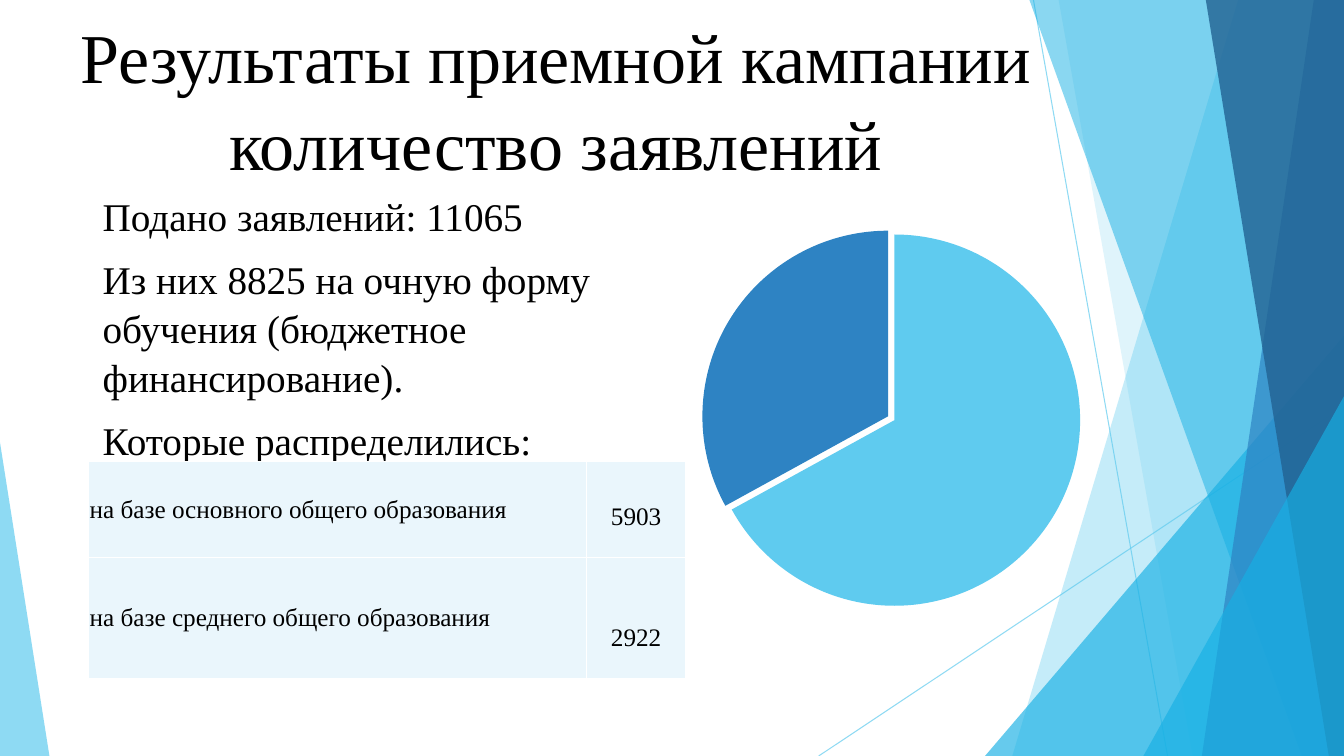
"""Build the slide on admission results with a pie chart and a table."""
import pptx
import pptx.chart.data
import pptx.dml.color
import pptx.enum.chart
import pptx.enum.shapes
import pptx.enum.text
import pptx.oxml
import pptx.oxml.ns
import pptx.util

RGB = pptx.dml.color.RGBColor
SKY = RGB(0x5F, 0xCB, 0xEF)
CYAN = RGB(0x17, 0xB0, 0xE4)
BLUE = RGB(0x2E, 0x83, 0xC3)
NAVY = RGB(0x22, 0x62, 0x92)
PALE = RGB(0xEA, 0xF6, 0xFC)
BLACK = RGB(0, 0, 0)
SERIF = "Times New Roman"
SCALE = 9144
WIDE, HIGH = 1333, 750
ALIGN = pptx.enum.text.PP_ALIGN
ANCHOR = pptx.enum.text.MSO_ANCHOR
qn = pptx.oxml.ns.qn


def px(*nums):
    return [pptx.util.Emu(num * SCALE) for num in nums]


def node(text):
    head, tail = text.split(">", 1) if not text.endswith("/>") else (text[:-2], None)
    names = pptx.oxml.ns.nsdecls("a", "c")
    return pptx.oxml.parse_xml(f"{head} {names}/>" if tail is None else f"{head} {names}>{tail}")


def fade(fill, color, alpha):
    fill.solid()
    fill.fore_color.rgb = color
    tint = fill.fore_color._xFill.find(qn("a:srgbClr"))
    tint.append(node(f'<a:alpha val="{alpha * 1000}"/>'))


def paint(shape, color, alpha):
    shape.shadow.inherit = False
    fade(shape.fill, color, alpha)
    shape.line.fill.background()


def add_line(slide, ends):
    kind = pptx.enum.shapes.MSO_CONNECTOR.STRAIGHT
    line = slide.shapes.add_connector(kind, *px(*ends))
    line.line.width = pptx.util.Pt(0.75)
    fade(line.line.fill, SKY, 70)
    line._element.spPr.append(node("<a:effectLst/>"))


def add_band(slide, top, base, color, alpha):
    pen = slide.shapes.build_freeform(top, 0, scale=SCALE)
    pen.add_line_segments([(WIDE, 0), (WIDE, HIGH), (base, HIGH)], close=True)
    paint(pen.convert_to_shape(), color, alpha)


def add_peak(slide, box, tip, color, alpha):
    kind = pptx.enum.shapes.MSO_SHAPE.ISOSCELES_TRIANGLE
    peak = slide.shapes.add_shape(kind, *px(*box))
    peak.adjustments[0] = tip
    paint(peak, color, alpha)


def add_run(para, text, size):
    run = para.add_run()
    run.text = text
    run.font.name = SERIF
    run.font.size = pptx.util.Pt(size)
    run.font.color.rgb = BLACK


def fill_title(slide, lines):
    title = slide.shapes.title
    title.left, title.top, title.width, title.height = px(22, 0, 1059, 144)
    frame = title.text_frame
    frame.word_wrap = True
    frame.auto_size = pptx.enum.text.MSO_AUTO_SIZE.NONE
    frame.vertical_anchor = ANCHOR.TOP
    frame.margin_top = px(10)[0]
    para = frame.paragraphs[0]
    para.alignment = ALIGN.CENTER
    para.line_spacing = 1.04
    for num, line in enumerate(lines):
        if num:
            para.add_line_break()
        add_run(para, line, 50)
    slide.shapes._spTree.append(title._element)


def add_body(slide, box, lines):
    frame = slide.shapes.add_textbox(*px(*box)).text_frame
    frame.word_wrap = True
    for num, line in enumerate(lines):
        para = frame.add_paragraph() if num else frame.paragraphs[0]
        para.space_before = pptx.util.Pt(10)
        para.line_spacing = 1.04
        add_run(para, line, 28)


def add_pie(slide, box, parts):
    data = pptx.chart.data.CategoryChartData()
    data.categories = ["1", "2"]
    data.add_series("Series 1", [val for val, _ in parts])
    kind = pptx.enum.chart.XL_CHART_TYPE.PIE
    chart = slide.shapes.add_chart(kind, *px(*box), data).chart
    chart.has_legend = False
    chart.has_title = False
    chart.font.name = "Cabin"
    chart.font.size = pptx.util.Pt(10)
    chart.font.color.rgb = BLACK
    plot = chart.plots[0]
    plot.vary_by_categories = True
    series = plot.series[0]
    for num, (_, color) in enumerate(parts):
        fill = series.points[num].format.fill
        fill.solid()
        fill.fore_color.rgb = color
    series._element.find(qn("c:dPt")).addprevious(node('<c:explosion val="2"/>'))
    area = chart._chartSpace.find(".//" + qn("c:plotArea"))
    for old in area.findall(qn("c:layout")):
        area.remove(old)
    spots = {"x": 0.16, "y": 0, "w": 0.75, "h": 0.81}
    rules = '<c:layoutTarget val="inner"/><c:xMode val="edge"/><c:yMode val="edge"/>'
    rules += "".join(f'<c:{key} val="{val}"/>' for key, val in spots.items())
    area.insert(0, node(f"<c:layout><c:manualLayout>{rules}</c:manualLayout></c:layout>"))


def fill_cell(cell, text, is_num):
    cell.margin_left = cell.margin_right = cell.margin_top = px(1)[0]
    cell.margin_bottom = px(26 if is_num else 0)[0]
    cell.vertical_anchor = ANCHOR.BOTTOM if is_num else ANCHOR.MIDDLE
    para = cell.text_frame.paragraphs[0]
    para.alignment = ALIGN.CENTER if is_num else ALIGN.LEFT
    add_run(para, text, 18)
    for side in "LRTB":
        cell._tc.get_or_add_tcPr().append(node(
            f'<a:ln{side} w="12700"><a:solidFill><a:srgbClr val="FFFFFF"/>'
            f"</a:solidFill></a:ln{side}>"))
    cell.fill.solid()
    cell.fill.fore_color.rgb = PALE


def add_grid(slide, spot, wides, highs, rows):
    box = px(*spot, sum(wides), sum(highs))
    table = slide.shapes.add_table(len(rows), len(wides), *box).table
    table.first_row = table.horz_banding = False
    for col, wide in zip(table.columns, px(*wides)):
        col.width = wide
    for num, (row, high) in enumerate(zip(rows, px(*highs))):
        table.rows[num].height = high
        for col, text in enumerate(row):
            fill_cell(table.cell(num, col), text, col == 1)


def add_decor(slide):
    add_line(slide, (1025, 0, 1158, 750))
    add_line(slide, (1333, 403, 812, 750))
    add_band(slide, 1228, 1004, SKY, 36)
    add_band(slide, 1050, 1183, SKY, 20)
    add_peak(slide, (977, 333, 356, 417), 1, CYAN, 66)
    add_band(slide, 1021, 1291, CYAN, 50)
    add_band(slide, 1303, 1192, BLUE, 70)
    add_band(slide, 1196, 1318, NAVY, 80)
    add_peak(slide, (1134, 393, 199, 357), 1, CYAN, 66)
    add_peak(slide, (0, 439, 49, 311), 0, SKY, 70)


def main():
    deck = pptx.Presentation()
    deck.slide_width, deck.slide_height = px(WIDE, HIGH)
    slide = deck.slides.add_slide(deck.slide_layouts[5])
    add_decor(slide)
    fill_title(slide, ["Результаты приемной кампании", "количество заявлений"])
    add_body(slide, (92, 184, 567, 492), [
        "Подано заявлений: 11065",
        "Из них 8825 на очную форму обучения (бюджетное финансирование).",
        "Которые распределились:",
    ])
    add_pie(slide, (616, 204, 501, 521), [(67, SKY), (33, BLUE)])
    add_grid(slide, (88, 458), [494, 98], [95, 120], [
        ("на базе основного общего образования", "5903"),
        ("на базе среднего общего образования", "2922"),
    ])
    deck.save("out.pptx")


if __name__ == "__main__":
    main()
